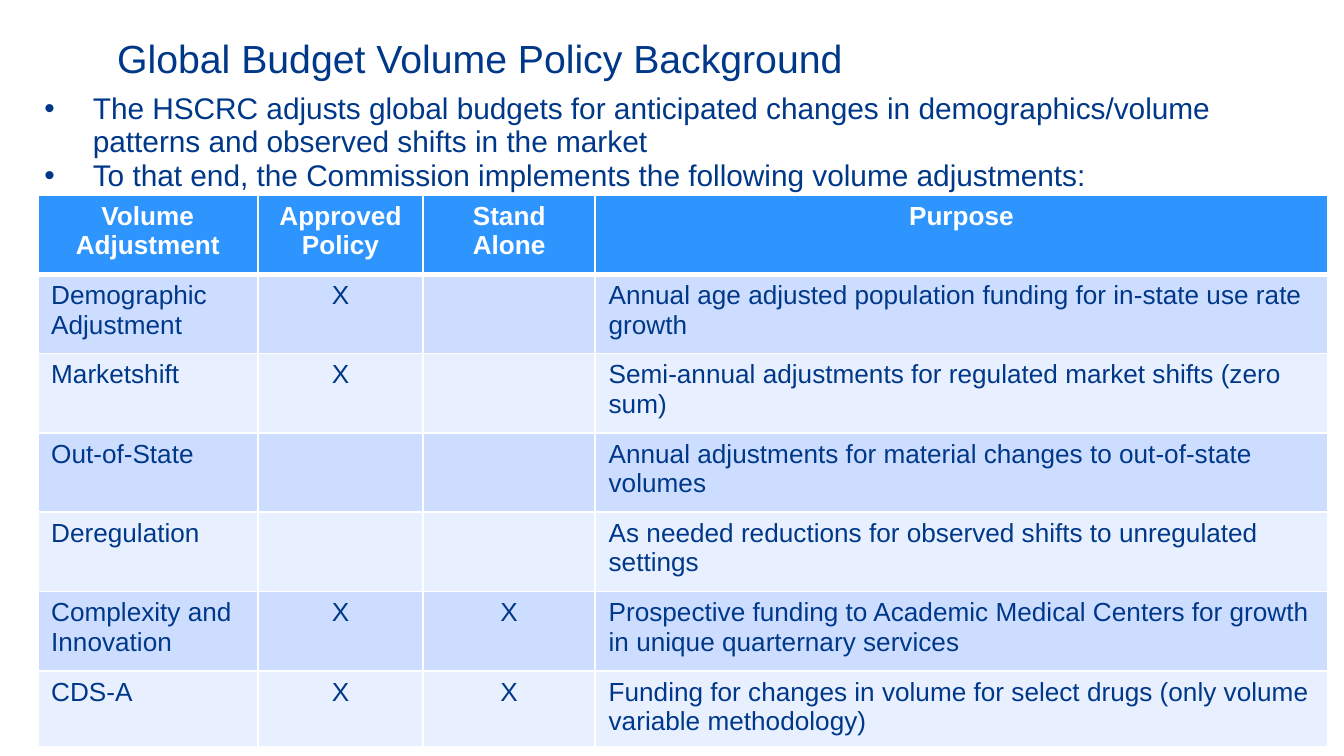
import pptx
import pptx.dml.color
import pptx.enum.text
import pptx.oxml.ns
import pptx.util
from lxml import etree

COLORS = {"navy": "003889", "white": "FFFFFF", "header": "2E95FF",
          "band_dark": "CDDDFF", "band_light": "E8EFFF"}
BULLETS = [
    "The HSCRC adjusts global budgets for anticipated changes in demographics/volume "
    "patterns and observed shifts in the market",
    "To that end, the Commission implements the following volume adjustments:",
]
ADJUSTMENTS = [
    ("Volume Adjustment", "Approved Policy", "Stand Alone", "Purpose"),
    ("Demographic Adjustment", "X", "",
     "Annual age adjusted population funding for in-state use rate growth"),
    ("Marketshift", "X", "",
     "Semi-annual adjustments for regulated market shifts (zero sum)"),
    ("Out-of-State", "", "",
     "Annual adjustments for material changes to out-of-state volumes"),
    ("Deregulation", "", "",
     "As needed reductions for observed shifts to unregulated settings"),
    ("Complexity and Innovation", "X", "X",
     "Prospective funding to Academic Medical Centers for growth in unique quarternary services"),
    ("CDS-A", "X", "X",
     "Funding for changes in volume for select drugs (only volume variable methodology)"),
]
COLUMN_WIDTHS = [118, 88.5, 92.2, 392.5]
ROW_HEIGHTS = [42.5] * 6 + [28]


def points(value):
    return pptx.util.Pt(value)


def add_element(parent, tag, **attributes):
    return etree.SubElement(parent, pptx.oxml.ns.qn(tag), attributes)


class SlideBuilder:
    font_name = "Arial"

    def __init__(self, slide):
        self.slide = slide

    def rgb(self, color):
        return pptx.dml.color.RGBColor.from_string(COLORS[color])

    def format_runs(self, paragraph, size, color="navy", bold=False):
        for run in paragraph.runs:
            run.font.name = self.font_name
            run.font.size = points(size)
            run.font.bold = bold
            run.font.color.rgb = self.rgb(color)

    def text(self, box, content, size):
        shape = self.slide.shapes.add_textbox(*map(points, box))
        frame = shape.text_frame
        frame.word_wrap = True
        frame.margin_left = frame.margin_right = points(5.2)
        frame.margin_top = frame.margin_bottom = points(2.6)
        frame.text = content
        for paragraph in frame.paragraphs:
            self.format_runs(paragraph, size)
        return frame

    def bullets(self, box, items, size):
        frame = self.text(box, "\n".join(items), size)
        for paragraph in frame.paragraphs:
            paragraph.line_spacing = 0.94
            properties = paragraph._p.get_or_add_pPr()
            properties.set("marL", str(points(36)))
            properties.set("indent", str(points(-26)))
            color = add_element(properties, "a:buClr")
            add_element(color, "a:srgbClr", val=COLORS["navy"])
            add_element(properties, "a:buFont", typeface=self.font_name)
            add_element(properties, "a:buChar", char="•")

    def borders(self, cell, widths):
        properties = cell._tc.get_or_add_tcPr()
        for side, width in zip("LRTB", widths):
            line = add_element(properties, f"a:ln{side}", w=str(points(width)))
            fill = add_element(line, "a:solidFill")
            add_element(fill, "a:srgbClr", val=COLORS["white"])

    def table(self, box, rows, column_widths, row_heights, size):
        shape = self.slide.shapes.add_table(len(rows), len(column_widths), *map(points, box))
        table = shape.table
        for column, width in zip(table.columns, column_widths):
            column.width = points(width)
        for row, height in zip(table.rows, row_heights):
            row.height = points(height)
        for row_index, row in enumerate(rows):
            header = row_index == 0
            band = "band_dark" if row_index % 2 else "band_light"
            top = 3 if row_index == 1 else 1
            bottom = 3 if header else 1
            for column_index, content in enumerate(row):
                cell = table.cell(row_index, column_index)
                self.borders(cell, (1, 1, top, bottom))
                cell.fill.solid()
                cell.fill.fore_color.rgb = self.rgb("header" if header else band)
                cell.text_frame.text = content
                paragraph = cell.text_frame.paragraphs[0]
                if header or column_index in (1, 2):
                    paragraph.alignment = pptx.enum.text.PP_ALIGN.CENTER
                self.format_runs(paragraph, size, "white" if header else "navy", header)


def main():
    presentation = pptx.Presentation()
    presentation.slide_width = points(720)
    presentation.slide_height = points(405)
    builder = SlideBuilder(presentation.slides.add_slide(presentation.slide_layouts[6]))
    builder.text((57.6, 15.8, 620.6, 51.8), "Global Budget Volume Policy Background", 21)
    builder.bullets((8.6, 46.8, 703.4, 342.7), BULLETS, 16)
    builder.table((20.2, 104.4, sum(COLUMN_WIDTHS), sum(ROW_HEIGHTS)),
                  ADJUSTMENTS, COLUMN_WIDTHS, ROW_HEIGHTS, 14)
    presentation.save("out.pptx")


if __name__ == "__main__":
    main()
